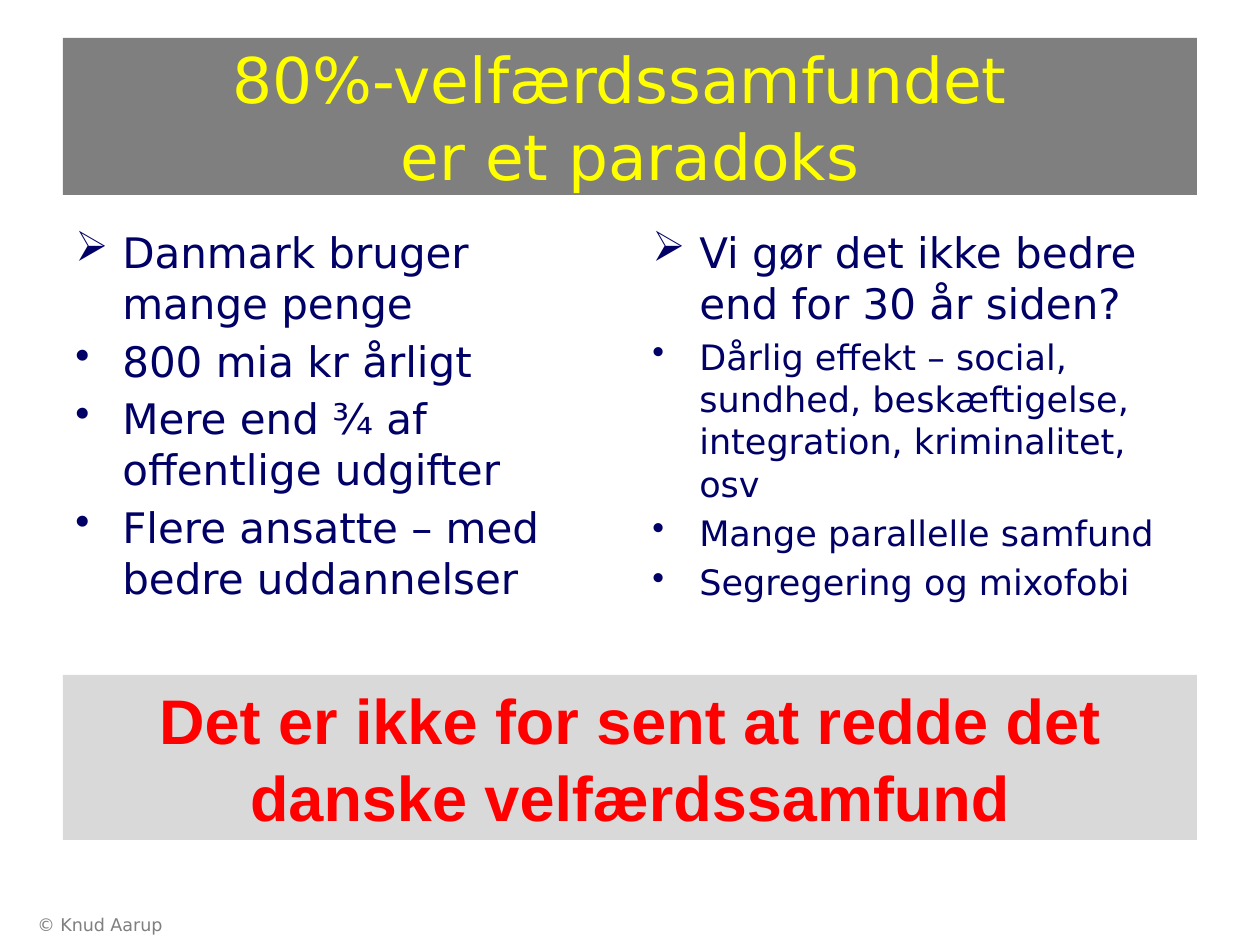
from pptx import Presentation
from pptx.dml.color import RGBColor
from pptx.enum.shapes import MSO_SHAPE as Shape
from pptx.enum.text import MSO_ANCHOR as Anchor, PP_ALIGN as Align
from pptx.oxml.ns import qn
from pptx.util import Emu, Pt
from lxml.etree import SubElement

PX = 914400 // 126
SANS, ARIAL = "DejaVu Sans", "Arial"
NAVY, GREY = "000066", "7F7F7F"
LEADING = 1.21
INDENT = 47

SPENDING = [
    ("➢", "Danmark bruger mange penge", 24),
    ("•", "800 mia kr årligt", 24),
    ("•", "Mere end ¾ af offentlige udgifter", 24),
    ("•", "Flere ansatte – med bedre uddannelser", 24),
]
RESULTS = [
    ("➢", "Vi gør det ikke bedre end for 30 år siden?", 24),
    ("•", "Dårlig effekt – social, sundhed, beskæftigelse, "
          "integration, kriminalitet, osv", 20),
    ("•", "Mange parallelle samfund", 20),
    ("•", "Segregering og mixofobi", 20),
]


def px(*lengths):
    return [Emu(length * PX) for length in lengths]


def color(value):
    return RGBColor.from_string(value)


def style(paragraph, size, ink, face=SANS, bold=False):
    paragraph.line_spacing = Pt(size * LEADING)
    font = paragraph.font
    font.name, font.size, font.bold = face, Pt(size), bold
    font.color.rgb = color(ink)


def add_banner(slide, box, fill, text, ink, face=SANS, bold=False):
    banner = slide.shapes.add_shape(Shape.RECTANGLE, *px(*box))
    banner.shadow.inherit = False
    banner.fill.solid()
    banner.fill.fore_color.rgb = color(fill)
    banner.line.fill.background()
    frame = banner.text_frame
    frame.word_wrap = True
    frame.vertical_anchor = Anchor.MIDDLE
    paragraph = frame.paragraphs[0]
    paragraph.text = text
    paragraph.alignment = Align.CENTER
    style(paragraph, 36, ink, face, bold)


def add_text_frame(slide, box):
    frame = slide.shapes.add_textbox(*px(*box)).text_frame
    frame.word_wrap = True
    return frame


def add_bullets(slide, box, items):
    frame = add_text_frame(slide, box)
    for i, (bullet, text, size) in enumerate(items):
        paragraph = frame.add_paragraph() if i else frame.paragraphs[0]
        paragraph.text = text
        # Hanging indent and bullet character
        props = paragraph._p.get_or_add_pPr()
        props.set("marL", str(INDENT * PX))
        props.set("indent", str(-INDENT * PX))
        SubElement(props, qn("a:buChar")).set("char", bullet)
        if i:
            paragraph.space_before = Pt(4)
        style(paragraph, size, NAVY)


def add_footer(slide, box, text):
    paragraph = add_text_frame(slide, box).paragraphs[0]
    paragraph.text = text
    style(paragraph, 10, GREY)


def main():
    deck = Presentation()
    deck.slide_width, deck.slide_height = px(1260, 945)
    slide = deck.slides.add_slide(deck.slide_layouts[6])

    # Title
    add_banner(slide, (63, 38, 1134, 157), GREY,
               "80%-velfærdssamfundet \ver et paradoks", "FFFF00")
    # Two columns
    add_bullets(slide, (63, 220, 557, 483), SPENDING)
    add_bullets(slide, (640, 220, 557, 503), RESULTS)
    # Copyright line and conclusion
    add_footer(slide, (25, 908, 294, 37), "© Knud Aarup")
    add_banner(slide, (63, 675, 1134, 165), "D9D9D9",
               "Det er ikke for sent at redde det danske velfærdssamfund",
               "FF0000", ARIAL, True)

    deck.save("out.pptx")


if __name__ == "__main__":
    main()
